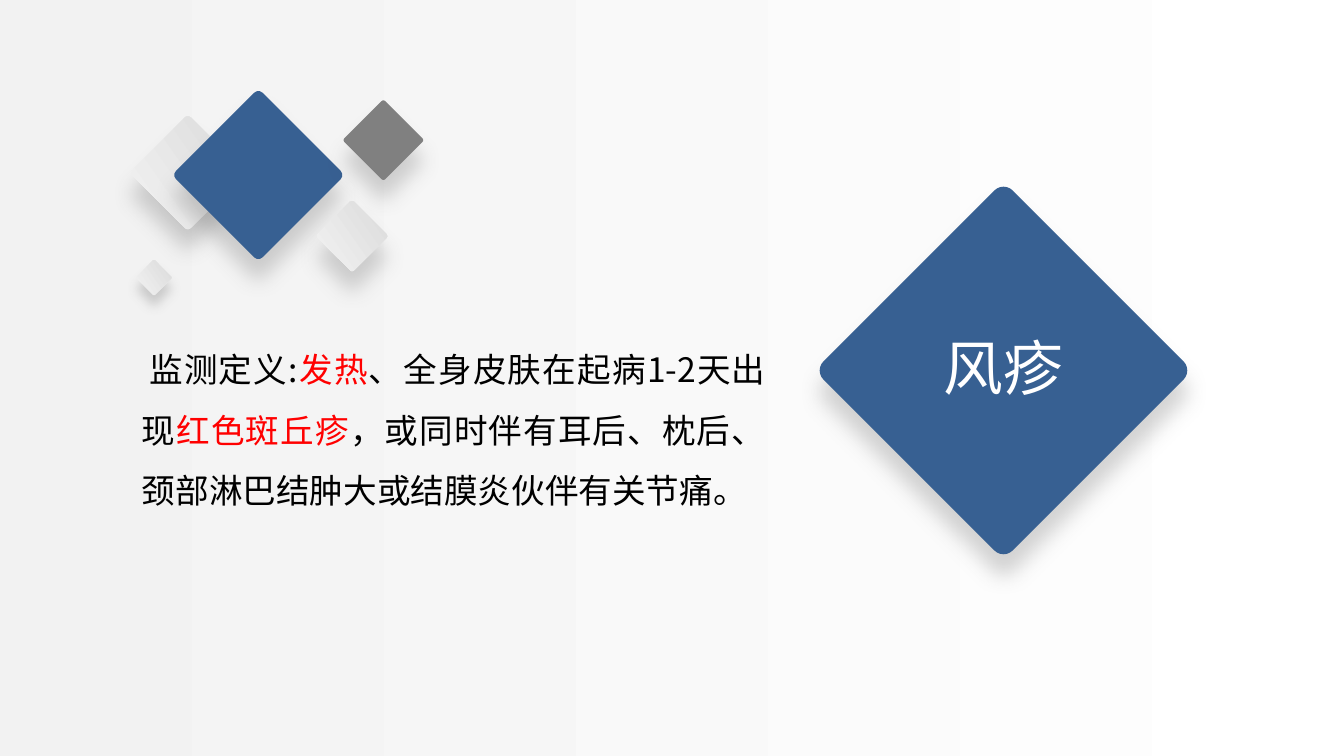
from dataclasses import dataclass

from lxml.etree import SubElement
from pptx import Presentation
from pptx.dml.color import RGBColor
from pptx.enum.shapes import MSO_SHAPE
from pptx.enum.text import MSO_AUTO_SIZE, PP_ALIGN
from pptx.oxml.ns import qn
from pptx.util import Pt


@dataclass(frozen=True)
class Theme:
    font: str = "Noto Sans CJK SC"
    blue: str = "376092"
    gray: str = "808080"
    red: str = "FF0000"
    black: str = "000000"
    white: str = "FFFFFF"
    shadow: str = "595959"
    backdrop: tuple = ("F2F2F2", "FFFFFF")
    silver: tuple = ("F2F2F2", "DBDBDB")
    indent_size: int = 12
    body_size: int = 18
    title_size: int = 32


THEME = Theme()
WIDTH, HEIGHT = 720, 405


def paint(shape, color, angle=0):
    """Fill with one colour, or with a gradient when given a pair."""
    shape.line.fill.background()
    shape.shadow.inherit = False
    if isinstance(color, str):
        shape.fill.solid()
        shape.fill.fore_color.rgb = RGBColor.from_string(color)
        return
    shape.fill.gradient()
    shape.fill.gradient_angle = angle
    for position, (stop, value) in enumerate(zip(shape.fill.gradient_stops, color)):
        stop.position = position
        stop.color.rgb = RGBColor.from_string(value)


def add_shadow(shape, depth):
    """Cast a soft shadow straight down."""
    effects = shape._element.spPr.find(qn("a:effectLst"))
    outer = SubElement(effects, qn("a:outerShdw"), blurRad=str(Pt(depth)),
                       dist=str(Pt(depth)), dir="5400000", algn="t", rotWithShape="0")
    color = SubElement(outer, qn("a:srgbClr"), val=THEME.shadow)
    SubElement(color, qn("a:alpha"), val="25000")


def add_diamond(shapes, center_x, center_y, side, color, depth=11):
    diamond = shapes.add_shape(MSO_SHAPE.ROUNDED_RECTANGLE,
                               Pt(center_x - side / 2), Pt(center_y - side / 2),
                               Pt(side), Pt(side))
    diamond.adjustments[0] = 0.048
    diamond.rotation = 45
    paint(diamond, color, angle=80)
    add_shadow(diamond, depth)


def add_text(page, left, top, width, height, spans, align, spacing=1.0, insets=(7.2, 3.6)):
    box = page.shapes.add_textbox(Pt(left), Pt(top), Pt(width), Pt(height))
    frame = box.text_frame
    frame.word_wrap = True
    frame.auto_size = MSO_AUTO_SIZE.SHAPE_TO_FIT_TEXT
    frame.margin_left = frame.margin_right = Pt(insets[0])
    frame.margin_top = frame.margin_bottom = Pt(insets[1])
    para = frame.paragraphs[0]
    para.alignment = align
    para.line_spacing = spacing
    for text, size, color in spans:
        span = para.add_run()
        span.text = text
        span.font.size = Pt(size)
        span.font.name = THEME.font
        span.font.color.rgb = RGBColor.from_string(color)
        SubElement(span.font._element, qn("a:ea"), typeface=THEME.font)


def main():
    deck = Presentation()
    deck.slide_width, deck.slide_height = Pt(WIDTH), Pt(HEIGHT)
    page = deck.slides.add_slide(deck.slide_layouts[6])

    # Backdrop
    backdrop = page.shapes.add_shape(MSO_SHAPE.RECTANGLE, 0, 0, Pt(WIDTH), Pt(HEIGHT))
    paint(backdrop, THEME.backdrop)

    # Definition, with the key symptoms in red
    size = THEME.body_size
    definition = [
        (" ", THEME.indent_size, THEME.gray),
        ("监测定义:", size, THEME.black),
        ("发热", size, THEME.red),
        ("、全身皮肤在起病1-2天出现", size, THEME.black),
        ("红色斑丘疹", size, THEME.red),
        ("，或同时伴有耳后、枕后、颈部淋巴结肿大或结膜炎伙伴有关节痛。", size, THEME.black),
    ]
    add_text(page, 70.6, 173.5, 344.9, 98.6, definition, PP_ALIGN.JUSTIFY,
             spacing=1.5, insets=(5.4, 2.7))

    # Disease name on a large diamond
    add_diamond(page.shapes, 537.6, 198.5, 143.3, THEME.blue)
    add_text(page, 494.6, 173.5, 85.7, 46.1,
             [("风疹", THEME.title_size, THEME.white)], PP_ALIGN.CENTER)

    # Cluster of small diamonds
    cluster = page.shapes.add_group_shape()
    for center_x, center_y, side, color, depth in [
        (100.6, 92.6, 44, THEME.silver, 11),
        (138.4, 93.8, 65.5, THEME.blue, 11),
        (205.4, 75.1, 31, THEME.gray, 11),
        (188.6, 126.5, 27.4, THEME.silver, 11),
        (82.5, 148.7, 13.7, THEME.silver, 6),
    ]:
        add_diamond(cluster.shapes, center_x, center_y, side, color, depth)

    deck.save("out.pptx")


if __name__ == "__main__":
    main()
